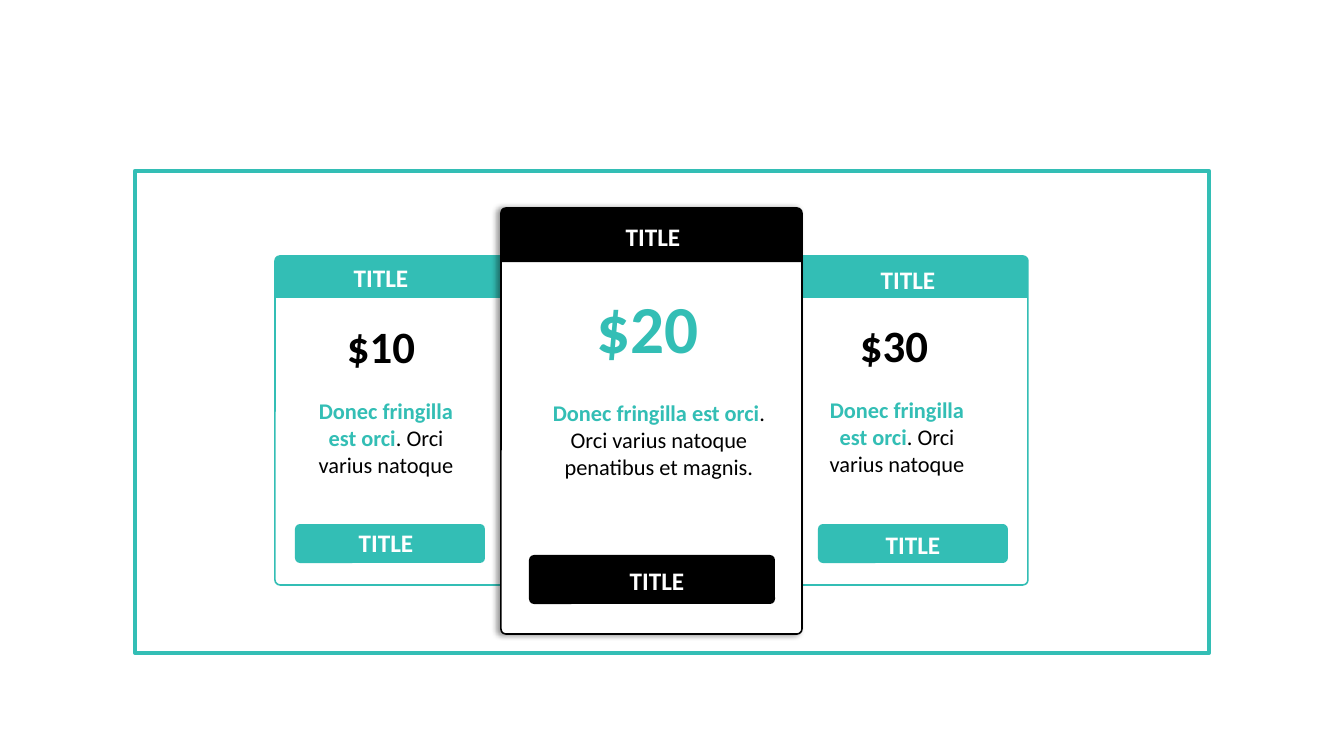
import pptx
import pptx.util
import pptx.dml.color
import pptx.enum.shapes
import pptx.enum.text
import pptx.oxml
import pptx.oxml.ns

PX = 914400 / 100.8
SHAPE = pptx.enum.shapes.MSO_SHAPE
FONT = "Calibri"
TEAL, BLACK, WHITE = "33BEB5", "000000", "FFFFFF"
RADIUS = 5
FRAME = (135, 171, 1074, 482)

LEAD = "Donec fringilla est orci"
SHORT = ". Orci varius natoque"
LONG = ". Orci varius natoque penatibus et magnis."

# Boxes are (left, top, width, height) in px; the featured card comes last, on top.
CARDS = [
    dict(box=(275, 256, 232, 329), header=42, button=(295, 524, 190, 39),
         accent=TEAL, featured=False,
         title=("TITLE", (275, 257, 212, 40)), action=("TITLE", (280, 522, 212, 40)),
         price=("$10", (298, 314, 166, 64), 32, BLACK),
         detail=(SHORT, (303, 392, 166, 92))),
    dict(box=(796, 256, 232, 329), header=42, button=(818, 524, 190, 39),
         accent=TEAL, featured=False,
         title=("TITLE", (802, 259, 212, 40)), action=("TITLE", (807, 524, 212, 40)),
         price=("$30", (811, 313, 166, 64), 32, BLACK),
         detail=(SHORT, (814, 391, 166, 92))),
    dict(box=(501, 208, 301, 426), header=54, button=(529, 555, 246, 49),
         accent=BLACK, featured=True,
         title=("TITLE", (547, 216, 212, 40)), action=("TITLE", (551, 560, 212, 40)),
         price=("$20", (565, 281, 166, 92), 48, TEAL),
         detail=(LONG, (536, 394, 246, 92))),
]


def rgb(color):
    return pptx.dml.color.RGBColor.from_string(color)


def emu(box):
    return [round(v * PX) for v in box]


def add_box(kind, box, fill=None, line=None, width=1.13):
    sp = slide.shapes.add_shape(kind, *emu(box))
    sp.shadow.inherit = False
    if kind != SHAPE.RECTANGLE:
        sp.adjustments[0] = RADIUS / min(box[2:])
    if fill:
        sp.fill.solid()
        sp.fill.fore_color.rgb = rgb(fill)
    else:
        sp.fill.background()
    if line:
        sp.line.color.rgb = rgb(line)
        sp.line.width = pptx.util.Pt(width)
    else:
        sp.line.fill.background()
    return sp


def add_shadow(sp):
    """Cast a soft shadow to the left of the shape."""
    effects = sp._element.spPr.find(pptx.oxml.ns.qn("a:effectLst"))
    effects.append(pptx.oxml.parse_xml(
        f'<a:outerShdw {pptx.oxml.ns.nsdecls("a")} blurRad="50800" dist="38100" '
        'dir="10800000" algn="r" rotWithShape="0"><a:srgbClr val="000000">'
        '<a:alpha val="40000"/></a:srgbClr></a:outerShdw>'))


def add_text(box, size, runs):
    """Add one centred paragraph; runs are (text, colour, bold)."""
    tf = slide.shapes.add_textbox(*emu(box)).text_frame
    tf.word_wrap = True
    tf.auto_size = pptx.enum.text.MSO_AUTO_SIZE.SHAPE_TO_FIT_TEXT
    p = tf.paragraphs[0]
    p.alignment = pptx.enum.text.PP_ALIGN.CENTER
    p.font.name = FONT
    p.font.size = pptx.util.Pt(size)
    for text, color, bold in runs:
        r = p.add_run()
        r.text = text
        r.font.color.rgb = rgb(color)
        r.font.bold = bold


def add_card(card):
    left, top, width, _ = card["box"]
    accent = card["accent"]
    body = add_box(SHAPE.ROUNDED_RECTANGLE, card["box"], WHITE, accent)
    if card["featured"]:
        add_shadow(body)
    add_box(SHAPE.ROUND_2_SAME_RECTANGLE, (left, top, width, card["header"]), accent)
    add_box(SHAPE.ROUNDED_RECTANGLE, card["button"], accent)

    price, box, size, color = card["price"]
    add_text(box, size, [(price, color, True)])
    rest, box = card["detail"]
    add_text(box, 16, [(LEAD, TEAL, True), (rest, BLACK, False)])
    for label, box in (card["title"], card["action"]):
        add_text(box, 18, [(label, WHITE, True)])


prs = pptx.Presentation()
prs.slide_width, prs.slide_height = emu((1344, 756))
slide = prs.slides.add_slide(prs.slide_layouts[6])
for card in CARDS:
    add_card(card)
add_box(SHAPE.RECTANGLE, FRAME, line=TEAL, width=3)
prs.save("out.pptx")
